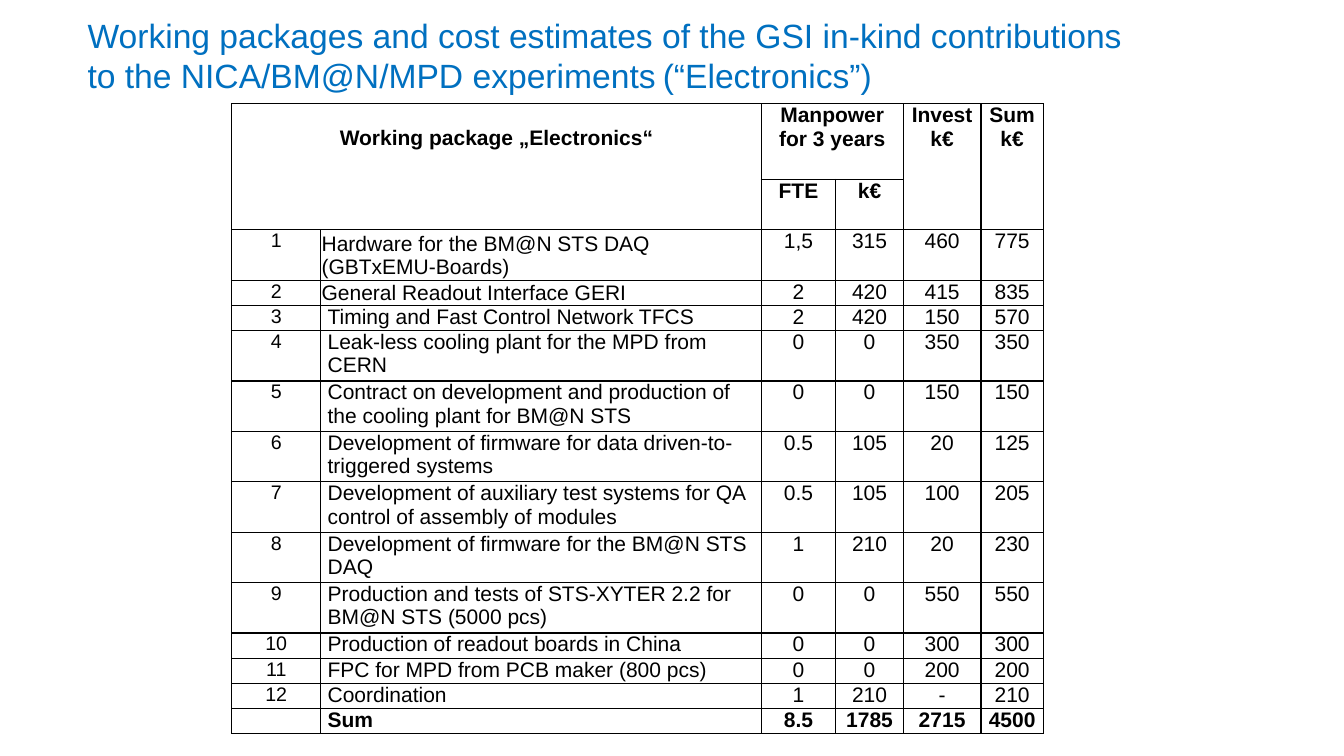
from lxml import etree
from pptx import Presentation, util as u
from pptx.dml.color import RGBColor
from pptx.enum import text
from pptx.oxml import ns

BLACK = RGBColor(0x00, 0x00, 0x00)
BLUE = RGBColor(0x00, 0x70, 0xC0)
CENTER, LEFT, JUSTIFY = text.PP_ALIGN.CENTER, text.PP_ALIGN.LEFT, text.PP_ALIGN.JUSTIFY
LINE = 0.25  # height of one text line in the table, inches


def write(paragraph, content, **font):
    run = paragraph.add_run()
    run.text = content
    color = font.pop("color", BLACK)
    for name, value in {"name": "Arial", **font}.items():
        setattr(run.font, name, value)
    run.font.color.rgb = color


def fill_cell(cell, content, size=15, bold=False, align=CENTER, **layout):
    layout = {"margin_left": u.Inches(0.07), "margin_right": u.Inches(0.07),
              "margin_top": 0, "margin_bottom": 0, **layout}
    for name, value in layout.items():
        setattr(cell, name, value)
    for index, line in enumerate(content.split("\n")):
        frame = cell.text_frame
        paragraph = frame.add_paragraph() if index else frame.paragraphs[0]
        paragraph.alignment = align
        if line:
            write(paragraph, line, size=u.Pt(size), bold=bold)
        else:
            # An empty cell must not stretch its row
            etree.SubElement(paragraph._p, ns.qn("a:endParaRPr"), sz=str(size * 100))


presentation = Presentation()
presentation.slide_width = u.Inches(13.33)
presentation.slide_height = u.Inches(7.5)
slide = presentation.slides.add_slide(presentation.slide_layouts[6])

# Cost table
columns = [0.88, 4.37, 0.74, 0.67, 0.77, 0.62]
packages = [
    ("Hardware for the BM@N STS DAQ (GBTxEMU-Boards)", 2, "1,5", "315", "460", "775"),
    ("General Readout Interface GERI", 1, "2", "420", "415", "835"),
    ("Timing and Fast Control Network TFCS", 1, "2", "420", "150", "570"),
    ("Leak-less cooling plant for the MPD from CERN", 2, "0", "0", "350", "350"),
    ("Contract on development and production of the cooling plant for BM@N STS",
     2, "0", "0", "150", "150"),
    ("Development of firmware for data driven-to-triggered systems",
     2, "0.5", "105", "20", "125"),
    ("Development of auxiliary test systems for QA control of assembly of modules",
     2, "0.5", "105", "100", "205"),
    ("Development of firmware for the BM@N STS DAQ", 2, "1", "210", "20", "230"),
    ("Production and tests of STS-XYTER 2.2 for BM@N STS (5000 pcs)",
     2, "0", "0", "550", "550"),
    ("Production of readout boards in China", 1, "0", "0", "300", "300"),
    ("FPC for MPD from PCB maker (800 pcs)", 1, "0", "0", "200", "200"),
    ("Coordination", 1, "1", "210", "-", "210"),
    ("Sum", 1, "8.5", "1785", "2715", "4500"),
]
row_lines = [3, 2] + [package[1] for package in packages]
table = slide.shapes.add_table(
    len(row_lines), len(columns), u.Inches(2.3), u.Inches(1.03),
    u.Inches(sum(columns)), u.Inches(sum(row_lines) * LINE)).table
table.first_row = table.horz_banding = False
for column, width in zip(table.columns, columns):
    column.width = u.Inches(width)
for row, lines in zip(table.rows, row_lines):
    row.height = u.Inches(lines * LINE)

# Black grid without fills
for cell in table.iter_cells():
    properties = cell._tc.get_or_add_tcPr()
    for side in ("a:lnL", "a:lnR", "a:lnT", "a:lnB"):
        border = etree.SubElement(properties, ns.qn(side), w=str(u.Pt(1)))
        solid = etree.SubElement(border, ns.qn("a:solidFill"))
        etree.SubElement(solid, ns.qn("a:srgbClr"), val=str(BLACK))
    cell.fill.background()

# Header: row, column, last row, last column, words, top margin
headers = [
    (0, 0, 1, 1, "Working package „Electronics“", 0.23),
    (0, 2, 0, 3, "Manpower\nfor 3 years", 0),
    (0, 4, 1, 4, "Invest k€", 0),
    (0, 5, 1, 5, "Sum k€", 0),
    (1, 2, 1, 2, "FTE", 0),
    (1, 3, 1, 3, "k€", 0),
]
for top, left, bottom, right, words, margin in headers:
    cell = table.cell(top, left)
    if (top, left) != (bottom, right):
        cell.merge(table.cell(bottom, right))
    fill_cell(cell, words, bold=True, margin_top=u.Inches(margin))

# Working packages and the closing sum
tight = {"margin_left": u.Inches(0.01), "margin_right": u.Inches(0.01),
         "margin_top": u.Inches(0.01), "vertical_anchor": text.MSO_ANCHOR.MIDDLE}
for number, (name, lines, *values) in enumerate(packages, 1):
    row = number + 1
    is_sum = number == len(packages)
    fill_cell(table.cell(row, 0), "" if is_sum else str(number), size=14)
    fill_cell(table.cell(row, 1), name, bold=is_sum,
              align=JUSTIFY if number == 2 else LEFT, **(tight if number <= 2 else {}))
    for column, value in enumerate(values, 2):
        fill_cell(table.cell(row, column), value, bold=is_sum)

# Title
title = slide.shapes.add_textbox(
    u.Inches(0.77), u.Inches(0.09), u.Inches(10.66), u.Inches(0.91)).text_frame
title_format = {"word_wrap": False, "vertical_anchor": text.MSO_ANCHOR.MIDDLE,
                "auto_size": text.MSO_AUTO_SIZE.SHAPE_TO_FIT_TEXT}
for name, value in title_format.items():
    setattr(title, name, value)
title_lines = [
    [("Working packages and cost estimates of the GSI in-kind contributions", 24)],
    [("to the NICA/BM@N/MPD experiments", 24), (" ", 18), ("(“Electronics”)", 24)],
]
for index, runs in enumerate(title_lines):
    paragraph = title.add_paragraph() if index else title.paragraphs[0]
    for words, size in runs:
        write(paragraph, words, size=u.Pt(size), color=BLUE)

presentation.save("out.pptx")
